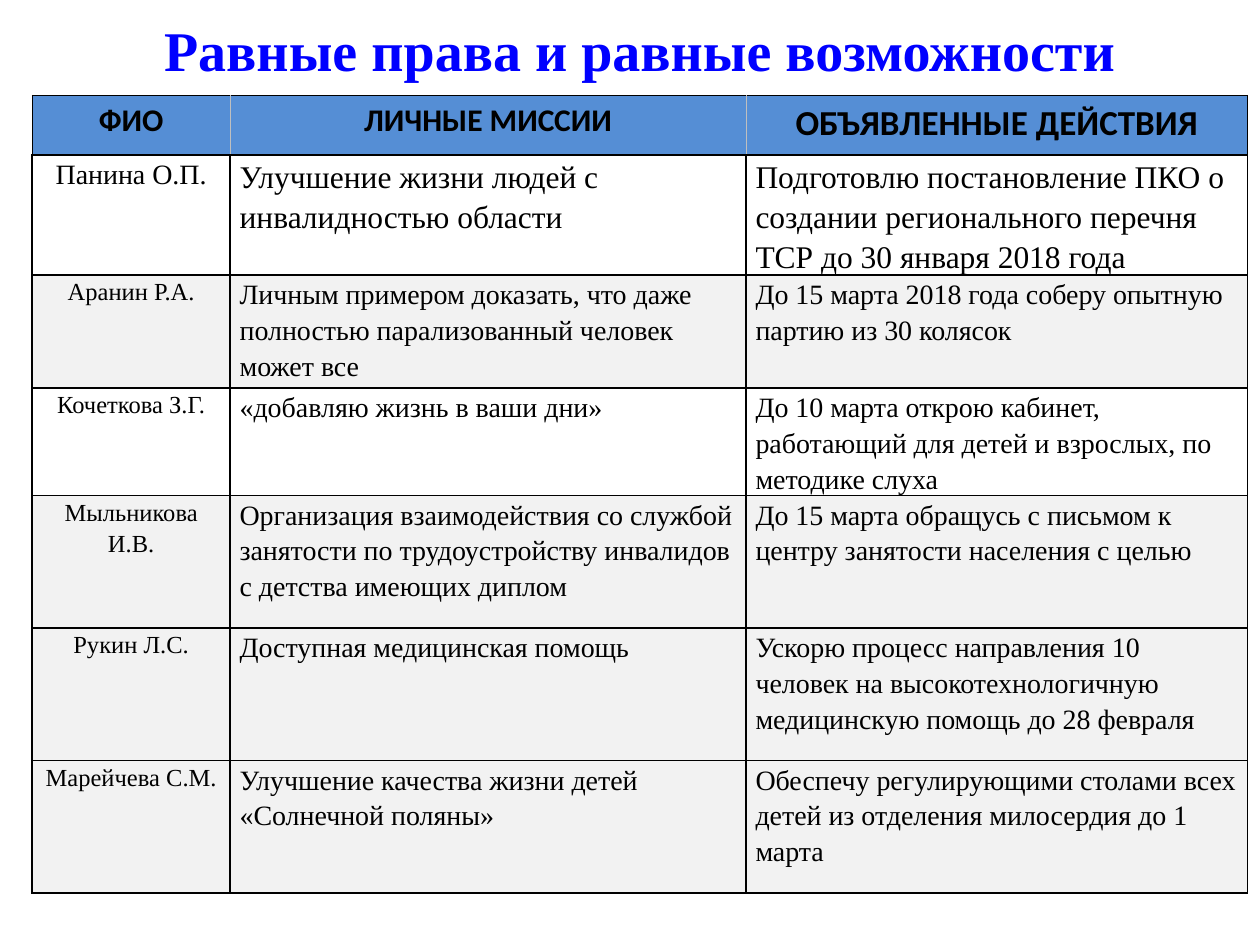
from dataclasses import dataclass

from lxml.etree import SubElement
from pptx import Presentation
from pptx.dml.color import RGBColor
from pptx.enum.text import MSO_ANCHOR as Anchor, PP_ALIGN as Align
from pptx.oxml.ns import qn
from pptx.util import Cm, Pt


@dataclass(frozen=True)
class Theme:
    title_color: str = "0000FF"
    ink: str = "000000"
    header_fill: str = "558ED5"
    header_divider: str = "BFBFBF"
    band_fill: str = "F2F2F2"
    header_font: str = "Calibri"
    body_font: str = "Times New Roman"
    title_size: int = 32
    header_sizes: tuple = (18, 18, 20)
    first_row_sizes: tuple = (16, 18, 18)
    row_sizes: tuple = (14, 16, 16)
    line_spacing: float = 1.15


THEME = Theme()
TITLE = "Равные права и равные возможности"
HEADERS = ("ФИО", "ЛИЧНЫЕ МИССИИ", "ОБЪЯВЛЕННЫЕ ДЕЙСТВИЯ")
PLEDGES = (
    ("Панина О.П.", "Улучшение жизни людей с инвалидностью области",
     "Подготовлю постановление ПКО о создании регионального перечня ТСР до 30 января 2018 года"),
    ("Аранин Р.А.", "Личным примером доказать, что даже полностью парализованный человек может все",
     "До 15 марта 2018 года соберу опытную партию из 30 колясок"),
    ("Кочеткова З.Г.", "«добавляю жизнь в ваши дни»",
     "До 10 марта открою кабинет, работающий для детей и взрослых, по методике слуха"),
    ("Мыльникова И.В.",
     "Организация взаимодействия со службой занятости по трудоустройству инвалидов "
     "с детства имеющих диплом",
     "До 15 марта обращусь с письмом к центру занятости населения с целью"),
    ("Рукин Л.С.", "Доступная медицинская помощь",
     "Ускорю процесс направления 10 человек на высокотехнологичную медицинскую помощь до 28 февраля"),
    ("Марейчева С.М.", "Улучшение качества жизни детей «Солнечной поляны»",
     "Обеспечу регулирующими столами всех детей из отделения милосердия до 1 марта"),
)
PLAIN_ROWS = (1, 3)
COLUMN_WIDTHS = (3.99, 10.4, 10.11)
ROW_HEIGHTS = (1.2, 2.42, 2.28, 2.16, 2.67, 2.67, 2.67)


def write_text(text_frame, text, font_name, size, color, bold=False, align=Align.LEFT):
    text_frame.text = text
    text_frame.word_wrap = True
    paragraph = text_frame.paragraphs[0]
    paragraph.alignment = align
    font = paragraph.runs[0].font
    font.name, font.size, font.bold = font_name, Pt(size), bold
    font.color.rgb = RGBColor.from_string(color)
    return paragraph


def set_borders(cell, borders):
    """Draw (side, colour, points) borders, sides in the order L, R, T, B."""
    properties = cell._tc.get_or_add_tcPr()
    for side, color, points in borders:
        line = SubElement(properties, qn(f"a:ln{side}"), w=str(Pt(points)))
        fill = SubElement(line, qn("a:solidFill"))
        SubElement(fill, qn("a:srgbClr"), val=color)


def set_fill(cell, color):
    cell.fill.solid()
    cell.fill.fore_color.rgb = RGBColor.from_string(color)


def set_margins(cell, vertical):
    cell.margin_left = cell.margin_right = Cm(0.19)
    cell.margin_top = cell.margin_bottom = Cm(vertical)


def format_header_cell(cell, column):
    last = len(HEADERS) - 1
    left = THEME.ink if column == 0 else THEME.header_divider
    right = THEME.ink if column == last else THEME.header_divider
    set_margins(cell, 0.13)
    set_borders(cell, (("L", left, 0.5), ("R", right, 0.5),
                       ("T", THEME.ink, 0.5), ("B", THEME.ink, 1)))
    set_fill(cell, THEME.header_fill)
    write_text(cell.text_frame, HEADERS[column], THEME.header_font,
               THEME.header_sizes[column], THEME.ink, True, Align.CENTER)


def format_pledge_cell(cell, row, column):
    sizes = THEME.first_row_sizes if row == 1 else THEME.row_sizes
    align = Align.CENTER if column == 0 else Align.LEFT
    set_margins(cell, 0)
    set_borders(cell, [(side, THEME.ink, 1) for side in "LRTB"])
    if row in PLAIN_ROWS:
        cell.fill.background()
    else:
        set_fill(cell, THEME.band_fill)
    paragraph = write_text(cell.text_frame, PLEDGES[row - 1][column], THEME.body_font,
                           sizes[column], THEME.ink, align=align)
    paragraph.line_spacing = THEME.line_spacing


def add_pledge_table(slide):
    table = slide.shapes.add_table(
        len(ROW_HEIGHTS), len(COLUMN_WIDTHS), Cm(0.65), Cm(1.92),
        Cm(sum(COLUMN_WIDTHS)), Cm(sum(ROW_HEIGHTS))).table
    table.first_row = table.horz_banding = False
    for column, width in zip(table.columns, COLUMN_WIDTHS):
        column.width = Cm(width)
    for row, height in zip(table.rows, ROW_HEIGHTS):
        row.height = Cm(height)
    for column in range(len(HEADERS)):
        format_header_cell(table.cell(0, column), column)
        for row in range(1, len(ROW_HEIGHTS)):
            format_pledge_cell(table.cell(row, column), row, column)


def add_title(slide):
    text_frame = slide.shapes.add_textbox(Cm(2.7), Cm(0.5), Cm(20.4), Cm(1)).text_frame
    text_frame.vertical_anchor = Anchor.MIDDLE
    write_text(text_frame, TITLE, THEME.body_font, THEME.title_size,
               THEME.title_color, True, Align.CENTER)


def main():
    presentation = Presentation()
    presentation.slide_width, presentation.slide_height = Cm(25.4), Cm(19.05)
    slide = presentation.slides.add_slide(presentation.slide_layouts[6])
    add_pledge_table(slide)
    add_title(slide)
    presentation.save("out.pptx")


if __name__ == "__main__":
    main()
